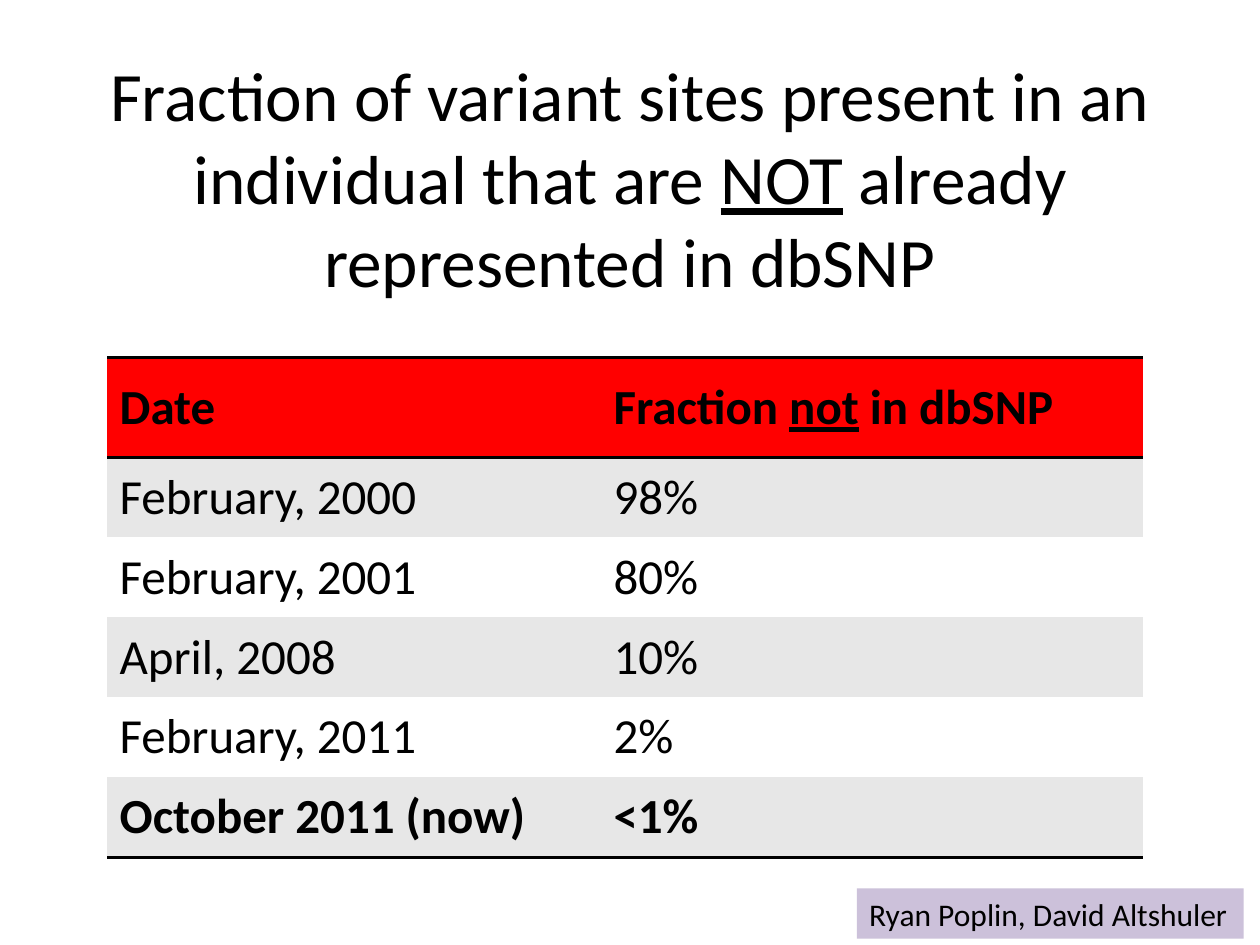
from lxml import etree
from pptx import Presentation
from pptx.dml.color import RGBColor
from pptx.enum.shapes import MSO_SHAPE
from pptx.enum.text import MSO_ANCHOR, PP_ALIGN
from pptx.oxml.ns import qn
from pptx.util import Inches, Pt

RECTANGLE = MSO_SHAPE.RECTANGLE
MIDDLE = MSO_ANCHOR.MIDDLE
LEFT, CENTER = PP_ALIGN.LEFT, PP_ALIGN.CENTER
BLACK = RGBColor(0x00, 0x00, 0x00)
WHITE = RGBColor(0xFF, 0xFF, 0xFF)
RED = RGBColor(0xFF, 0x00, 0x00)
GRAY = RGBColor(0xE7, 0xE7, 0xE7)
LAVENDER = RGBColor(0xCC, 0xC1, 0xDA)
PLAIN_TABLE_STYLE = "{2D5ABB26-0587-4C30-8999-92F81FD0307C}"


def write_text(text_frame, text, size, bold=False, align=LEFT, wrap=True):
    text_frame.word_wrap = wrap
    text_frame.vertical_anchor = MIDDLE
    paragraph = text_frame.paragraphs[0]
    paragraph.alignment = align
    for index, part in enumerate(text.split("_")):
        run = paragraph.add_run()
        run.text = part
        run.font.name = "Calibri"
        run.font.size = Pt(size)
        run.font.bold = bold
        run.font.underline = index % 2 == 1
        run.font.color.rgb = BLACK


def add_border(cell, side):
    line = etree.Element(qn(f"a:{side}"), w=str(Pt(2)))
    fill = etree.SubElement(line, qn("a:solidFill"))
    etree.SubElement(fill, qn("a:srgbClr"), val=str(BLACK))
    cell._tc.get_or_add_tcPr().insert(0, line)


presentation = Presentation()
presentation.slide_width = Inches(10)
presentation.slide_height = Inches(7.5)
slide = presentation.slides.add_slide(presentation.slide_layouts[6])
column = presentation.slide_width // 100
row = presentation.slide_height // 75

title = slide.shapes.add_textbox(int(7.5 * column), 6 * row, 85 * column, int(16.1 * row))
write_text(
    title.text_frame,
    "Fraction of variant sites present in an individual that are _NOT_ already represented in dbSNP",
    size=39.6,
    align=CENTER,
)

table_rows = [
    ("Date", "Fraction _not_ in dbSNP"),
    ("February, 2000", "98%"),
    ("February, 2001", "80%"),
    ("April, 2008", "10%"),
    ("February, 2011", "2%"),
    ("October 2011 (now)", "<1%"),
]
column_widths = [int(39.2 * column), 43 * column]
row_heights = [int(7.9 * row)] + [int(6.35 * row)] * (len(table_rows) - 1)
table = slide.shapes.add_table(
    len(table_rows), len(column_widths),
    int(8.5 * column), int(28.4 * row), sum(column_widths), sum(row_heights),
).table
table._tbl.tblPr.find(qn("a:tableStyleId")).text = PLAIN_TABLE_STYLE
table.horz_banding = False
for table_column, width in zip(table.columns, column_widths):
    table_column.width = width

last = len(table_rows) - 1
for row_index, texts in enumerate(table_rows):
    table.rows[row_index].height = row_heights[row_index]
    for column_index, text in enumerate(texts):
        cell = table.cell(row_index, column_index)
        cell.vertical_anchor = MIDDLE
        write_text(cell.text_frame, text, size=28, bold=row_index in (0, last))
        cell.fill.solid()
        cell.fill.fore_color.rgb = RED if row_index == 0 else GRAY if row_index % 2 else WHITE
        if row_index in (0, last):
            add_border(cell, "lnB")
        if row_index == 0:
            add_border(cell, "lnT")

credit = slide.shapes.add_shape(RECTANGLE, 68 * column, int(70.5 * row), int(30.7 * column), 4 * row)
credit.shadow.inherit = False
credit.fill.solid()
credit.fill.fore_color.rgb = LAVENDER
credit.line.fill.background()
write_text(credit.text_frame, "Ryan Poplin, David Altshuler", size=18, wrap=False)

presentation.save("out.pptx")
